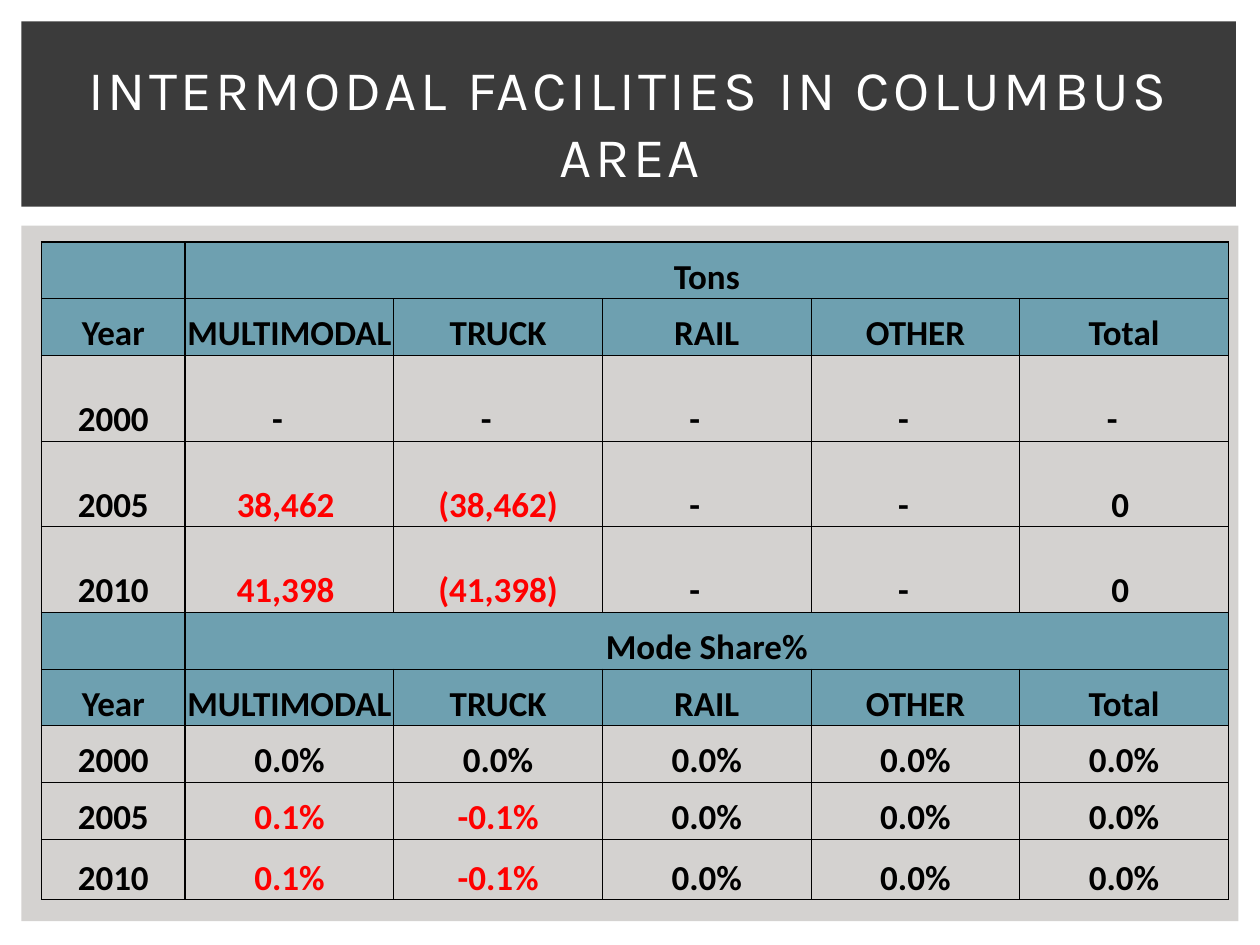
from dataclasses import dataclass

from lxml import etree
from pptx import Presentation
from pptx.dml.color import RGBColor
from pptx.enum import shapes, text
from pptx.oxml import ns
from pptx.util import Inches, Pt


@dataclass(frozen=True)
class Theme:
    band: str = "3B3B3B"
    panel: str = "D4D2D0"
    header: str = "6EA0B0"
    ink: str = "000000"
    change: str = "FF0000"
    title_ink: str = "FFFFFF"
    title_font: str = "Karla"
    table_font: str = "Calibri"
    title_size: int = 32
    table_size: int = 20
    thin: float = 0.5
    thick: float = 1


T = Theme()

MODES = ["Year", "MULTIMODAL", "TRUCK", "RAIL", "OTHER", "Total"]
SECTIONS = [
    ("Tons", [
        ["2000", "-", "-", "-", "-", "-"],
        ["2005", "38,462", "(38,462)", "-", "-", "0"],
        ["2010", "41,398", "(41,398)", "-", "-", "0"],
    ]),
    ("Mode Share%", [
        ["2000"] + ["0.0%"] * 5,
        ["2005", "0.1%", "-0.1%", "0.0%", "0.0%", "0.0%"],
        ["2010", "0.1%", "-0.1%", "0.0%", "0.0%", "0.0%"],
    ]),
]
SECTION_ROWS = 5
HEADER_ROWS = 2
ROW_HEIGHTS = [0.45, 0.45, 0.68, 0.68, 0.68, 0.45, 0.45, 0.45, 0.45, 0.48]
# Accounting format keeps room on the right of some values
RIGHT_INSETS = {"-": 0.19, "0": 0.06, "38,462": 0.06, "41,398": 0.06}


def write(tf, content, *, font, size, color, bold=False, spacing=None):
    p = tf.paragraphs[0]
    p.alignment = text.PP_ALIGN.CENTER
    r = p.add_run()
    r.text = content
    r.font.name = font
    r.font.size = Pt(size)
    r.font.bold = bold
    r.font.color.rgb = RGBColor.from_string(color)
    if spacing:
        r.font._element.set("spc", str(spacing * 100))


def add_block(s, left, top, width, height, color):
    sp = s.shapes.add_shape(shapes.MSO_SHAPE.RECTANGLE, Inches(left),
                            Inches(top), Inches(width), Inches(height))
    sp.shadow.inherit = False
    sp.fill.solid()
    sp.fill.fore_color.rgb = RGBColor.from_string(color)
    sp.line.fill.background()


def place_title(s, content):
    title = s.shapes.title
    title.left, title.top = Inches(0.25), Inches(0.39)
    title.width, title.height = Inches(9.5), Inches(1.15)
    tf = title.text_frame
    tf.word_wrap = True
    tf.auto_size = text.MSO_AUTO_SIZE.NONE
    tf.vertical_anchor = text.MSO_ANCHOR.MIDDLE
    write(tf, content, font=T.title_font, size=T.title_size,
          color=T.title_ink, spacing=2)
    s.shapes._spTree.append(title._element)  # in front of the band


def set_borders(cell, row, col):
    """Heavy lines frame each section and its year column."""
    heavy = {
        "L": col <= 1,
        "R": col in (0, 5) or (col == 1 and row == 0),
        "T": row == 0,
        "B": row == SECTION_ROWS - 1,
    }
    tc_pr = cell._tc.get_or_add_tcPr()
    for side, is_heavy in heavy.items():
        ln = etree.SubElement(tc_pr, ns.qn(f"a:ln{side}"),
                              w=str(Pt(T.thick if is_heavy else T.thin)))
        fill = etree.SubElement(ln, ns.qn("a:solidFill"))
        etree.SubElement(fill, ns.qn("a:srgbClr"), val=T.ink)


def format_cell(cell, content, row, col):
    cell.margin_left = cell.margin_top = cell.margin_bottom = 0
    cell.margin_right = Inches(RIGHT_INSETS.get(content, 0))
    cell.vertical_anchor = text.MSO_ANCHOR.BOTTOM
    set_borders(cell, row, col)
    if row < HEADER_ROWS:
        cell.fill.solid()
        cell.fill.fore_color.rgb = RGBColor.from_string(T.header)
    else:
        cell.fill.background()
    if content:
        changed = row > HEADER_ROWS and col in (1, 2)
        write(cell.text_frame, content, font=T.table_font, size=T.table_size,
              color=T.change if changed else T.ink, bold=True)


def add_mode_table(s):
    width, year_width = 9.42, 1.14
    mode_width = (width - year_width) / (len(MODES) - 1)
    table = s.shapes.add_table(
        len(ROW_HEIGHTS), len(MODES), Inches(0.33), Inches(1.92),
        Inches(width), Inches(sum(ROW_HEIGHTS))).table
    for i, column in enumerate(table.columns):
        column.width = Inches(mode_width if i else year_width)
    for row, height in zip(table.rows, ROW_HEIGHTS):
        row.height = Inches(height)

    for n, (heading, values) in enumerate(SECTIONS):
        first = n * SECTION_ROWS
        rows = [["", heading, "", "", "", ""], MODES] + values
        for i, row in enumerate(rows):
            for j, content in enumerate(row):
                format_cell(table.cell(first + i, j), content, i, j)
        table.cell(first, 1).merge(table.cell(first, len(MODES) - 1))


def main():
    prs = Presentation()
    prs.slide_width, prs.slide_height = Inches(10), Inches(7.5)
    s = prs.slides.add_slide(prs.slide_layouts[5])

    # Backdrop
    add_block(s, 0.17, 1.79, 9.66, 5.52, T.panel)
    add_block(s, 0.17, 0.17, 9.64, 1.47, T.band)

    # Content
    place_title(s, "INTERMODAL FACILITIES IN COLUMBUS AREA")
    add_mode_table(s)
    prs.save("out.pptx")


if __name__ == "__main__":
    main()
